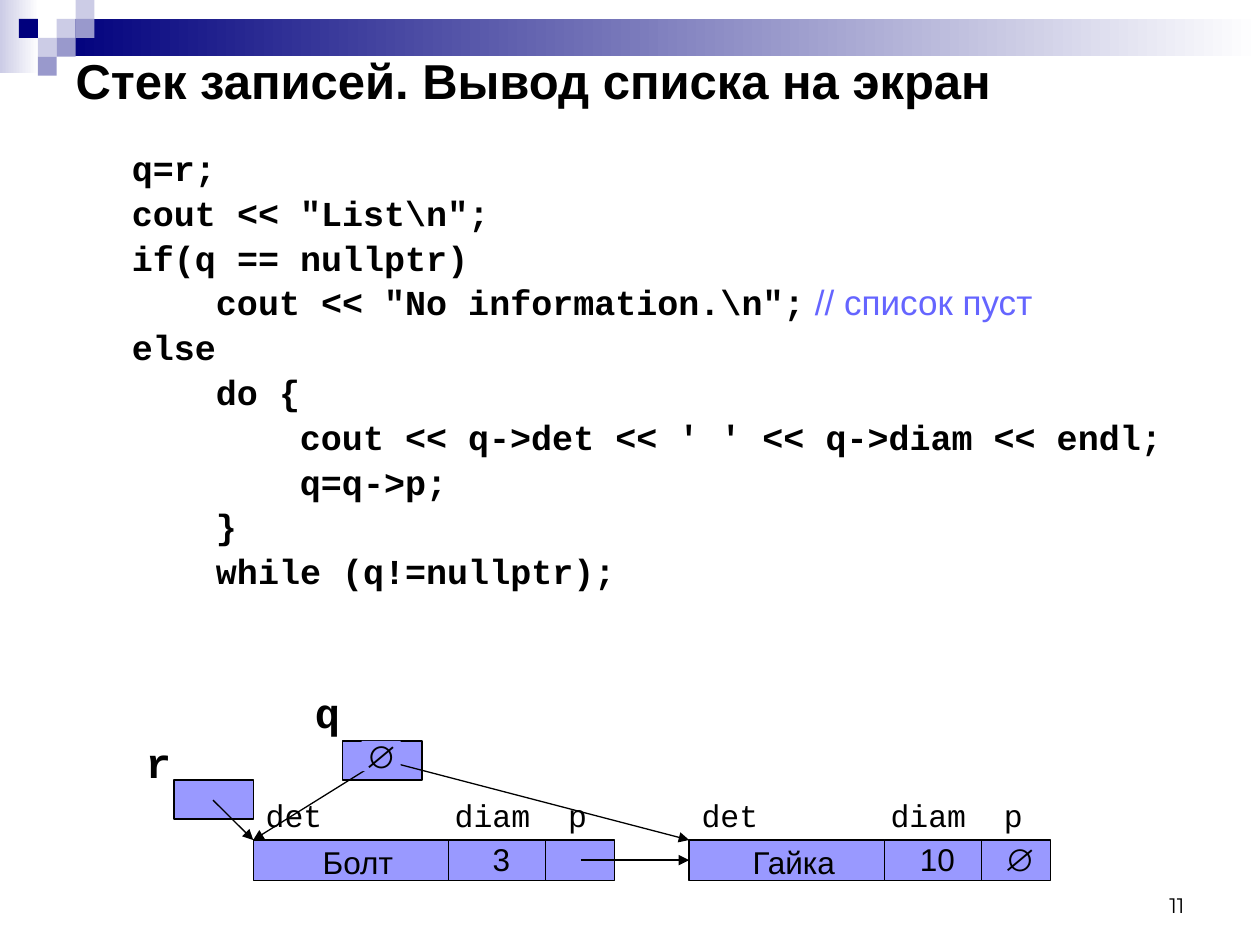
from lxml import etree
from pptx import Presentation
from pptx.dml.color import RGBColor
from pptx.enum import shapes, text
from pptx.oxml import ns
from pptx.util import Pt

THEME = {
    "ink": "000000", "cell": "9999FF", "comment": "6565FF",
    "navy": "00007D", "lilac": "CCCCE6", "violet": "9999CC", "paper": "FFFFFF",
    "sans": "Arial", "mono": "Courier New", "number": "Montserrat",
    "title": 28, "pointer": 24, "code": 20, "label": 18, "page": 12, "line": 0.75,
}


def write(paragraph, words, size, font="sans", bold=False, color="ink"):
    run = paragraph.add_run()
    run.text = words
    style = {"size": Pt(THEME[size]), "name": THEME[font], "bold": bold}
    for key, value in style.items():
        setattr(run.font, key, value)
    run.font.color.rgb = RGBColor.from_string(THEME[color])


def box(left, top, width, height, colors=("cell",), outline=False):
    rect = slide.shapes.add_shape(shapes.MSO_SHAPE.RECTANGLE, Pt(left), Pt(top), Pt(width), Pt(height))
    rect.shadow.inherit = False
    if len(colors) == 2:
        rect.fill.gradient()
        rect.fill.gradient_angle = 0
        for stop, color in zip(rect.fill.gradient_stops, colors):
            stop.color.rgb = RGBColor.from_string(THEME[color])
    else:
        rect.fill.solid()
        rect.fill.fore_color.rgb = RGBColor.from_string(THEME[colors[0]])
    if outline:
        rect.line.color.rgb = RGBColor.from_string(THEME["ink"])
        rect.line.width = Pt(THEME["line"])
    else:
        rect.line.fill.background()
    return rect


deck = Presentation()
deck.slide_width, deck.slide_height = Pt(720), Pt(540)
slide = deck.slides.add_slide(deck.slide_layouts[1])

box(0, 0, 22.3, 41.8, ("lilac", "paper"))
box(32.4, 10.8, 687.6, 21.4, ("navy", "paper"))
TILE = 10.8
for column, row, color in [(3, 1, "lilac"), (4, 0, "lilac"), (4, 1, "violet"), (2, 2, "lilac"),
                           (1, 1, "navy"), (3, 2, "violet"), (2, 3, "violet")]:
    box(column * TILE, row * TILE, TILE, TILE, (color,))

title, body = slide.placeholders
for holder, place, anchor in [(title, (36, 26, 648, 39.6), text.MSO_ANCHOR.MIDDLE),
                              (body, (20.2, 82.8, 699.8, 457.2), text.MSO_ANCHOR.TOP)]:
    for side, value in zip(("left", "top", "width", "height"), place):
        setattr(holder, side, Pt(value))
    frame_format = {"auto_size": text.MSO_AUTO_SIZE.NONE, "word_wrap": True, "vertical_anchor": anchor}
    for key, value in frame_format.items():
        setattr(holder.text_frame, key, value)

heading = title.text_frame.paragraphs[0]
heading.alignment = text.PP_ALIGN.LEFT
write(heading, "Стек записей. Вывод списка на экран", "title", bold=True)

code = [
    (1, "q=r;", ""),
    (1, 'cout << "List\\n";', ""),
    (1, "if(q == nullptr)", ""),
    (2, 'cout << "No information.\\n";', " // список пуст"),
    (1, "else", ""),
    (2, "do {", ""),
    (3, "cout << q->det << ' ' << q->diam << endl;", ""),
    (3, "q=q->p;", ""),
    (2, "}", ""),
    (2, "while (q!=nullptr);", ""),
]
INDENT = 48
for index, (depth, statement, comment) in enumerate(code):
    line = body.text_frame.add_paragraph() if index else body.text_frame.paragraphs[0]
    line_format = {"alignment": text.PP_ALIGN.LEFT, "line_spacing": 0.9, "space_before": Pt(4)}
    for key, value in line_format.items():
        setattr(line, key, value)
    properties = line._p.get_or_add_pPr()
    properties.set("marL", str(Pt(INDENT * depth)))
    properties.set("indent", "0")
    etree.SubElement(properties, ns.qn("a:buNone"))
    write(line, statement, "code", "mono", True)
    if comment:
        write(line, comment, "code", color="comment")

CELL_HEIGHT, NODE_TOP = 23, 480
NODE_LEFTS = (144.7, 393.8)
CELLS = [(0, 111.6), (111.6, 56.9), (167, 39.6)]
pointer_cells = [box(left, top, 45.4, 22.3, outline=True) for left, top in [(99.4, 445.7), (195.8, 423.4)]]
nodes = [[box(left + offset, NODE_TOP, width, CELL_HEIGHT, outline=True) for offset, width in CELLS]
         for left in NODE_LEFTS]

NEXT_Y = NODE_TOP + CELL_HEIGHT / 2
arrows = [
    ((121.7, 457.2), (NODE_LEFTS[0], NODE_TOP), None),
    ((331.9, NEXT_Y), (NODE_LEFTS[1], NEXT_Y), nodes[1][0]),
    ((218.2, 434.2), (NODE_LEFTS[0], NODE_TOP), None),
    ((218.2, 434.2), (NODE_LEFTS[1], NODE_TOP), None),
]
for start, end, target in arrows:
    arrow = slide.shapes.add_connector(shapes.MSO_CONNECTOR.STRAIGHT, *map(Pt, start + end))
    if target:
        arrow.end_connect(target, 1)
    arrow.line.color.rgb = RGBColor.from_string(THEME["ink"])
    arrow.line.width = Pt(THEME["line"])
    etree.SubElement(arrow.line._get_or_add_ln(), ns.qn("a:tailEnd"), type="triangle")
    etree.SubElement(arrow._element.spPr, ns.qn("a:effectLst"))

captions = [
    ("r", (76.3, 417.6, 28.8, 36), "pointer", "mono", True),
    ("q", (172.8, 388.8, 22.3, 36.7), "pointer", "mono", True),
    ("11", (516.2, 491.8, 167.8, 36), "page", "number", False),
] + [("det\tdiam\tp", (left, 451.4, 209.5, 28.8), "label", "mono", False) for left in NODE_LEFTS]
for words, place, size, font, bold in captions:
    caption = slide.shapes.add_textbox(*map(Pt, place)).text_frame
    caption.word_wrap = words != "r"
    paragraph = caption.paragraphs[0]
    if size == "page":
        caption.vertical_anchor = text.MSO_ANCHOR.BOTTOM
        paragraph.alignment = text.PP_ALIGN.RIGHT
    if size == "label":
        tabs = etree.SubElement(paragraph._p.get_or_add_pPr(), ns.qn("a:tabLst"))
        for stop in (108, 172.8):
            etree.SubElement(tabs, ns.qn("a:tab"), pos=str(Pt(stop)), algn="l")
    write(paragraph, words, size, font, bold)

FIELDS = [(17.3, 483.8, 85), (130.7, 482.4, 22.3), (177.8, 482.4, 22.3)]
values = [("∅", 206.6, 423.4, 22.3)]
for left, record in zip(NODE_LEFTS, [("Болт", "3"), ("Гайка", "10", "∅")]):
    values += [(words, left + offset, top, width) for words, (offset, top, width) in zip(record, FIELDS)]
for words, left, top, width in values:
    value_frame = box(left, top, width, 17.3).text_frame
    value_frame.word_wrap = False
    value_frame.vertical_anchor = text.MSO_ANCHOR.MIDDLE
    value_frame.paragraphs[0].alignment = text.PP_ALIGN.CENTER
    write(value_frame.paragraphs[0], words, "label", bold=words == "∅")

deck.save("out.pptx")
